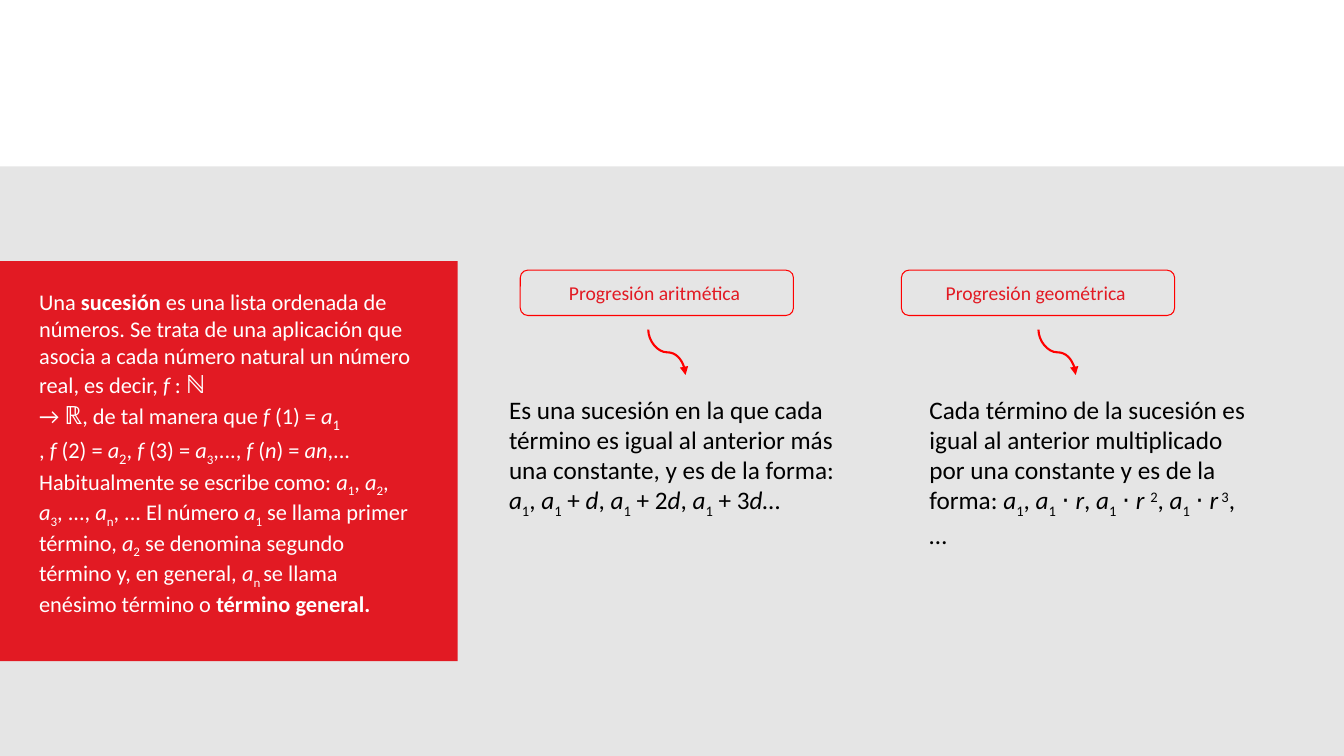
"""Build a slide that defines sequences and arithmetic and geometric progressions."""
from pptx import Presentation
from pptx import util as u
from pptx.dml.color import RGBColor
from pptx.enum import shapes, text
from pptx.oxml.ns import qn
from lxml import etree

WHITE = RGBColor(0xFF, 0xFF, 0xFF)
BLACK = RGBColor(0x00, 0x00, 0x00)
GREY = RGBColor(0xE5, 0xE5, 0xE5)
CRIMSON = RGBColor(0xE2, 0x1A, 0x23)
RED = RGBColor(0xFF, 0x00, 0x00)

DEFINITION = [
    "Una |*sucesión| es una lista ordenada de números. Se trata de una aplicación que "
    "asocia a cada número natural un número real, es decir, |/f |: |#ℕ",
    "→ |#ℝ|, de tal manera que |/f |(1) = |/a|~1",
    ", |/f |(2) = |/a|~2|, |/f |(3) = |/a|_3|,..., |/f |(|/n|) = |/an|"
    ",... Habitualmente se escribe como: |/a|_1|, |/a|_2|, |/a|_3|, ..., |/a|_n|"
    ", ... El número |/a|_1| se llama primer término, |/a|_2"
    "| se denomina segundo término y, en general, |/a|_n |"
    "se llama enésimo término o |*término general.",
]
ARITHMETIC = [
    "Es una sucesión en la que cada término es igual al anterior más",
    "una constante, y es de la forma: |/a|_1|, |/a|_1| + |/d|, |/a|_1| + 2|/d|, "
    "|/a|_1| + 3|/d|…",
]
GEOMETRIC = [
    "Cada término de la sucesión es igual al anterior multiplicado por una constante "
    "y es de la forma: |/a|_1|, |/a|_1| ⋅ |/r|, |/a|_1| ⋅ |/r |^2|, |/a|_1| ⋅ |/r|^ 3|, …",
]


class SlideBuilder:
    """Holds the text style and the current slide."""

    font = "Calibri"
    large = 18
    baselines = {"_": "-25000", "~": "-25000", "^": "30000"}

    def __init__(self, s):
        self.s = s

    def add_runs(self, p, marked, size, color):
        """Add runs split at bars; * bold, / italic, # large, _ sub, ~ large sub, ^ super."""
        for piece in marked.split("|"):
            mark = piece[0] if piece[0] in "*/#_~^" else ""
            r = p.add_run()
            r.text = piece[len(mark):]
            f = r.font
            f.name = self.font
            f.size = u.Pt(self.large if mark in ("#", "~") else size)
            f.color.rgb = color
            f.bold = mark == "*"
            f.italic = mark == "/"
            if mark in self.baselines:
                r._r.get_or_add_rPr().set("baseline", self.baselines[mark])

    def panel(self, x, y, w, h, color):
        """Draw a filled rectangle without outline."""
        sp = self.s.shapes.add_shape(shapes.MSO_SHAPE.RECTANGLE, *map(u.Inches, (x, y, w, h)))
        sp.shadow.inherit = False
        sp.fill.solid()
        sp.fill.fore_color.rgb = color
        sp.line.fill.background()

    def paragraphs(self, x, y, w, h, lines, size, color):
        """Add a wrapped text box with one paragraph per line."""
        sp = self.s.shapes.add_textbox(*map(u.Inches, (x, y, w, h)))
        tf = sp.text_frame
        tf.word_wrap = True
        tf.auto_size = text.MSO_AUTO_SIZE.SHAPE_TO_FIT_TEXT
        for i, line in enumerate(lines):
            p = tf.add_paragraph() if i else tf.paragraphs[0]
            self.add_runs(p, line, size, color)

    def heading(self, x, label):
        """Draw an outlined rounded heading."""
        sp = self.s.shapes.add_shape(shapes.MSO_SHAPE.ROUNDED_RECTANGLE,
                                     *map(u.Inches, (x, 2.68, 2.71, 0.45)))
        sp.shadow.inherit = False
        sp.fill.background()
        sp.line.color.rgb = RED
        sp.line.width = u.Pt(0.75)
        tf = sp.text_frame
        tf.vertical_anchor = text.MSO_ANCHOR.MIDDLE
        p = tf.paragraphs[0]
        p.alignment = text.PP_ALIGN.CENTER
        self.add_runs(p, label, 14, CRIMSON)

    def curved_arrow(self, x, y, w, h):
        """Draw a curved arrow that leaves and arrives vertically, by a quarter turn."""
        cx, cy = x + w / 2, y + h / 2
        ends = (cx + h / 2, cy - w / 2, cx - h / 2, cy + w / 2)
        sp = self.s.shapes.add_connector(shapes.MSO_CONNECTOR.CURVE, *map(u.Inches, ends))
        sp.line.color.rgb = RED
        sp.line.width = u.Pt(1.5)
        props = sp._element.spPr
        props.find(qn("a:xfrm")).set("rot", str(270 * 60000))
        etree.SubElement(props.find(qn("a:ln")), qn("a:tailEnd"), type="triangle")
        etree.SubElement(props, qn("a:effectLst"))


def main():
    """Create and save the presentation."""
    prs = Presentation()
    prs.slide_width, prs.slide_height = u.Inches(13.33), u.Inches(7.5)
    b = SlideBuilder(prs.slides.add_slide(prs.slide_layouts[6]))
    b.panel(0, 1.65, 13.33, 5.85, GREY)
    b.panel(0, 2.59, 4.54, 3.97, CRIMSON)
    b.paragraphs(0.29, 2.81, 3.93, 3.4, DEFINITION, 16, WHITE)
    columns = [
        (5.16, "Progresión aritmética ", 6.43, (4.95, 3.86, 3.72, 1.31), ARITHMETIC),
        (8.94, "Progresión geométrica ", 10.3, (9.12, 3.86, 3.33, 1.62), GEOMETRIC),
    ]
    for heading_x, label, arrow_x, box, lines in columns:
        b.heading(heading_x, label)
        b.curved_arrow(arrow_x, 3.27, 0.37, 0.45)
        b.paragraphs(*box, lines, 18, BLACK)
    prs.save("out.pptx")


if __name__ == "__main__":
    main()
